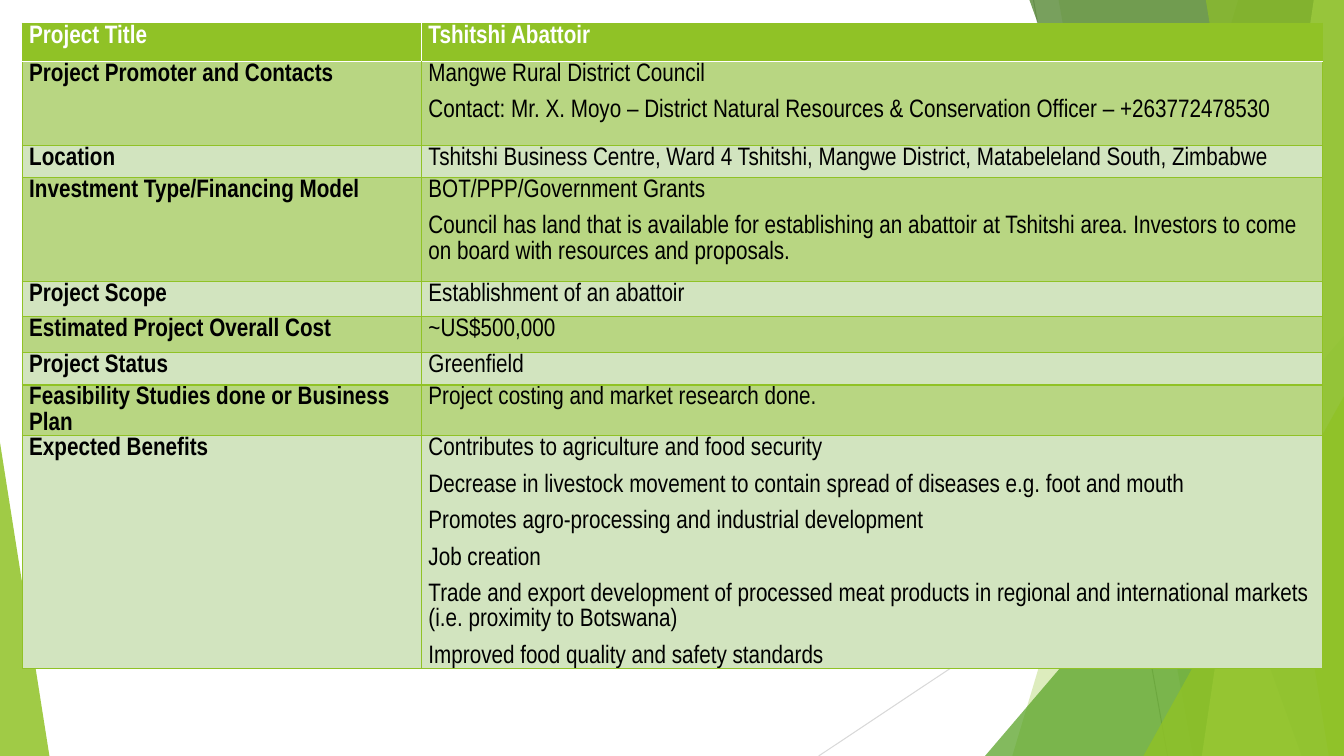
from lxml import etree
from pptx import Presentation
from pptx.dml.color import RGBColor
from pptx.enum import shapes as sh
from pptx.oxml import ns
from pptx.util import Inches, Pt

COLORS = {
    "lime": "90C226", "green": "54A021", "forest": "3F7819", "pale": "C0E474",
    "band_dark": "B8D682", "band_light": "D2E4BF", "white": "FFFFFF",
    "black": "000000", "line_mid": "BFBFBF", "line_soft": "D9D9D9",
}
WIDTH, HEIGHT = 13.33, 7.5
COLUMN_WIDTHS = [3.96, 8.94]

PROJECT_ROWS = [
    (0.38, "Project Title", ["Tshitshi Abattoir"]),
    (0.83, "Project Promoter and Contacts", [
        "Mangwe Rural District Council",
        "Contact: Mr. X. Moyo – District Natural Resources & Conservation Officer – +263772478530"]),
    (0.32, "Location", [
        "Tshitshi Business Centre, Ward 4 Tshitshi, Mangwe District, Matabeleland South, Zimbabwe"]),
    (1.03, "Investment Type/Financing Model", [
        "BOT/PPP/Government Grants",
        "Council has land that is available for establishing an abattoir at Tshitshi area. "
        "Investors to come on board with resources and proposals."]),
    (0.35, "Project Scope", ["Establishment of an abattoir"]),
    (0.36, "Estimated Project Overall Cost", ["~US$500,000"]),
    (0.32, "Project Status", ["Greenfield"]),
    (0.37, "Feasibility Studies done or Business Plan", [
        "Project costing and market research done."]),
    (1.58, "Expected Benefits", [
        "Contributes to agriculture and food security",
        "Decrease in livestock movement to contain spread of diseases e.g. foot and mouth",
        "Promotes agro-processing and industrial development",
        "Job creation",
        "Trade and export development of processed meat products in regional and "
        "international markets (i.e. proximity to Botswana)",
        "Improved food quality and safety standards"]),
]


def rgb(name):
    return RGBColor.from_string(COLORS[name])


def paint(facet, color, opacity):
    """Fill a borderless shape, with opacity in percent."""
    facet.shadow.inherit = False
    facet.line.fill.background()
    facet.fill.solid()
    facet.fill.fore_color.rgb = rgb(color)
    srgb = facet.fill._xPr.find(ns.qn("a:solidFill"))[0]
    etree.SubElement(srgb, ns.qn("a:alpha"), val=str(opacity * 1000))


def add_line(slide, start, end, color):
    points = [Inches(v) for v in (*start, *end)]
    line = slide.shapes.add_connector(sh.MSO_CONNECTOR.STRAIGHT, *points)
    line.line.color.rgb = rgb(color)
    line.line.width = Pt(0.75)
    etree.SubElement(line._element.spPr, ns.qn("a:effectLst"))


def add_panel(slide, top_left, bottom_left, color, opacity):
    """Full-height panel with a slanted left edge, reaching the right slide edge."""
    corners = [(top_left, 0), (WIDTH, 0), (WIDTH, HEIGHT), (bottom_left, HEIGHT)]
    points = [(Inches(x), Inches(y)) for x, y in corners]
    builder = slide.shapes.build_freeform(*points[0])
    builder.add_line_segments(points[1:], close=True)
    paint(builder.convert_to_shape(), color, opacity)


def add_triangle(slide, left, top, width, apex, color, opacity):
    """Triangle standing on the bottom slide edge."""
    triangle = slide.shapes.add_shape(
        sh.MSO_SHAPE.ISOSCELES_TRIANGLE,
        Inches(left), Inches(top), Inches(width), Inches(HEIGHT - top))
    triangle.adjustments[0] = apex
    paint(triangle, color, opacity)


def write(cell, paragraphs, bold=False, color="black", size=18, font="Arial Narrow"):
    frame = cell.text_frame
    for i, content in enumerate(paragraphs):
        paragraph = frame.add_paragraph() if i else frame.paragraphs[0]
        paragraph.line_spacing = 1.07
        paragraph.space_after = Pt(8)
        run = paragraph.add_run()
        run.text = content
        run.font.name, run.font.size, run.font.bold = font, Pt(size), bold
        run.font.color.rgb = rgb(color)


def set_border(cell, side, color, width):
    border = etree.SubElement(cell._tc.get_or_add_tcPr(), ns.qn(f"a:ln{side}"),
                              w=str(Pt(width)))
    fill = etree.SubElement(border, ns.qn("a:solidFill"))
    etree.SubElement(fill, ns.qn("a:srgbClr"), val=COLORS[color])


def format_cell(cell, row, column):
    cell.margin_left = cell.margin_right = Inches(0.07)
    cell.margin_top = cell.margin_bottom = 0
    for side in "LRTB":
        inner_header = row == 0 and (side, column) in (("R", 0), ("L", 1))
        if (row, side) in ((0, "B"), (1, "T")):
            set_border(cell, side, "white", 1.5)
        elif not inner_header:
            set_border(cell, side, "lime", 1)
    cell.fill.solid()
    band = "band_dark" if row % 2 else "band_light"
    cell.fill.fore_color.rgb = rgb(band if row else "lime")


def add_project_table(slide):
    total = sum(height for height, _, _ in PROJECT_ROWS)
    table = slide.shapes.add_table(
        len(PROJECT_ROWS), 2, Inches(0.22), Inches(0.23),
        Inches(sum(COLUMN_WIDTHS)), Inches(total)).table
    for column, width in zip(table.columns, COLUMN_WIDTHS):
        column.width = Inches(width)
    for row, (height, label, details) in enumerate(PROJECT_ROWS):
        table.rows[row].height = Inches(height)
        color = "black" if row else "white"
        write(table.cell(row, 0), [label], bold=True, color=color)
        write(table.cell(row, 1), details, bold=row == 0, color=color)
        for column in range(2):
            format_cell(table.cell(row, column), row, column)


def add_backdrop(slide):
    add_line(slide, (10.25, 0), (11.58, HEIGHT), "line_mid")
    add_line(slide, (WIDTH, 4.03), (8.12, HEIGHT), "line_soft")
    add_panel(slide, 12.28, 10.04, "lime", 30)
    add_panel(slide, 10.5, 11.83, "lime", 20)
    add_triangle(slide, 9.77, 3.33, 3.56, 1, "green", 72)
    add_panel(slide, 10.21, 12.91, "forest", 70)
    add_panel(slide, 13.03, 11.92, "pale", 70)
    add_panel(slide, 11.96, 13.18, "lime", 65)
    add_triangle(slide, 11.34, 3.93, 1.99, 1, "lime", 80)
    add_triangle(slide, 0, 4.39, 0.49, 0, "lime", 85)


def main():
    deck = Presentation()
    deck.slide_width, deck.slide_height = Inches(WIDTH), Inches(HEIGHT)
    slide = deck.slides.add_slide(deck.slide_layouts[6])
    add_backdrop(slide)
    add_project_table(slide)
    deck.save("out.pptx")


if __name__ == "__main__":
    main()
